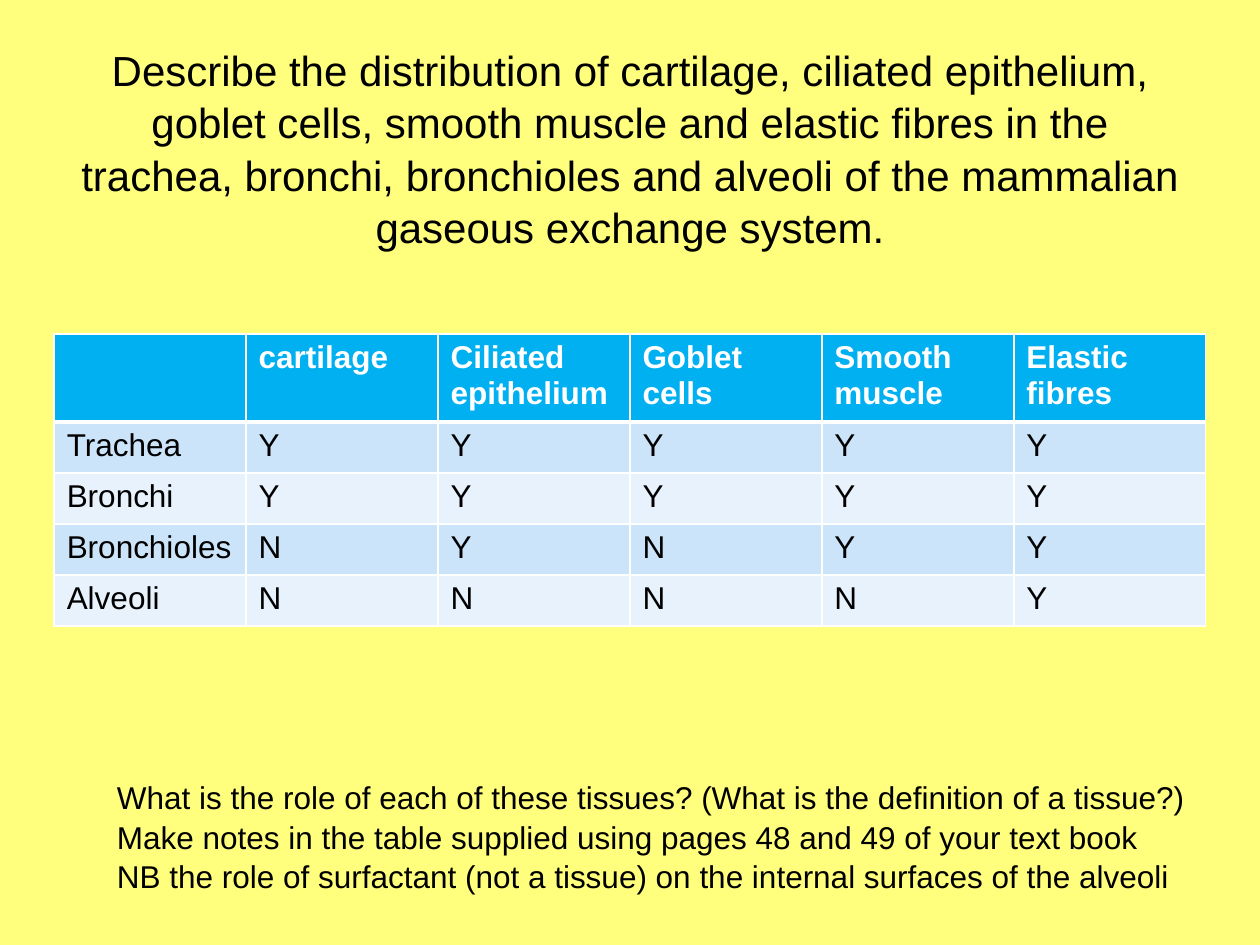
from lxml.etree import SubElement
from pptx import Presentation
from pptx.dml.color import RGBColor
from pptx.enum.text import MSO_ANCHOR, MSO_AUTO_SIZE, PP_ALIGN
from pptx.oxml.ns import qn
from pptx.util import Inches, Pt

TITLE = ("Describe the distribution of cartilage, ciliated epithelium, goblet cells, "
         "smooth muscle and elastic fibres in the trachea, bronchi, bronchioles and "
         "alveoli of the mammalian gaseous exchange system.")
HEAD = ["", "cartilage", "Ciliated epithelium", "Goblet cells", "Smooth muscle", "Elastic fibres"]
ROWS = [("Trachea", "YYYYY"), ("Bronchi", "YYYYY"), ("Bronchioles", "NYNYY"), ("Alveoli", "NNNNY")]
NOTES = [
    "What is the role of each of these tissues? (What is the definition of a tissue?)",
    "Make notes in the table supplied using pages 48 and 49 of your text book",
    "NB the role of surfactant (not a tissue) on the internal surfaces of the alveoli",
]


def paint(fill, color):
    """Give a fill one solid colour."""
    fill.solid()
    fill.fore_color.rgb = RGBColor.from_string(color)


def write(frame, *lines, size=18, color="000000", bold=False, align=PP_ALIGN.LEFT, gap=None):
    """Write each line as a paragraph in one format."""
    for i, line in enumerate(lines):
        para = frame.add_paragraph() if i else frame.paragraphs[0]
        para.text = line
        para.alignment = align
        para.line_spacing = gap
        font = para.font
        for run in para.runs:
            font = run.font
            font.name = "Arial"
            paint(font.fill, color)
        font.size = Pt(size)
        font.bold = bold


def edge(cell, base):
    """Draw white borders round a cell, with the given width at its base."""
    props = cell._tc.get_or_add_tcPr()
    widths = {"a:lnL": 1, "a:lnR": 1, "a:lnT": 1, "a:lnB": base}
    for i, (tag, width) in enumerate(widths.items()):
        line = SubElement(props, qn(tag), w=str(Pt(width)))
        fill = SubElement(line, qn("a:solidFill"))
        SubElement(fill, qn("a:srgbClr"), val="FFFFFF")
        props.insert(i, line)


def add_title(slide):
    """Place the task in the title placeholder."""
    title = slide.shapes.title
    title.left, title.top = Inches(0.5), Inches(0.3)
    title.width, title.height = Inches(9), Inches(2.03)
    frame = title.text_frame
    frame.word_wrap = True
    frame.auto_size = MSO_AUTO_SIZE.NONE
    frame.vertical_anchor = MSO_ANCHOR.MIDDLE
    frame.margin_bottom = Inches(0.34)
    write(frame, TITLE, size=24, align=PP_ALIGN.CENTER, gap=1.04)


def add_grid(slide):
    """Add the table of tissues in each airway."""
    data = [HEAD] + [[name, *marks] for name, marks in ROWS]
    wide, high, top = 9.14, 2.32, 0.7
    table = slide.shapes.add_table(len(data), len(HEAD), Inches(0.43), Inches(2.65),
                                   Inches(wide), Inches(high)).table
    for col in table.columns:
        col.width = Inches(wide / len(HEAD))
    for r, row in enumerate(data):
        table.rows[r].height = Inches((high - top) / len(ROWS) if r else top)
        back = ("E7F2FC", "CCE4F9")[r % 2] if r else "00B0F0"
        for c, text in enumerate(row):
            cell = table.cell(r, c)
            paint(cell.fill, back)
            edge(cell, 1 if r else 3)
            write(cell.text_frame, text, color="000000" if r else "FFFFFF", bold=not r)


def add_notes(slide):
    """Add the questions below the table."""
    box = slide.shapes.add_textbox(Inches(0.83), Inches(6.11), Inches(8.76), Inches(1.01))
    box.text_frame.word_wrap = False
    box.text_frame.auto_size = MSO_AUTO_SIZE.SHAPE_TO_FIT_TEXT
    write(box.text_frame, *NOTES, gap=1.05)


def main():
    """Build and save the slide."""
    deck = Presentation()
    deck.slide_width, deck.slide_height = Inches(10), Inches(7.5)
    slide = deck.slides.add_slide(deck.slide_layouts[5])
    paint(slide.background.fill, "FFFF7D")
    add_title(slide)
    add_grid(slide)
    add_notes(slide)
    deck.save("out.pptx")


if __name__ == "__main__":
    main()
